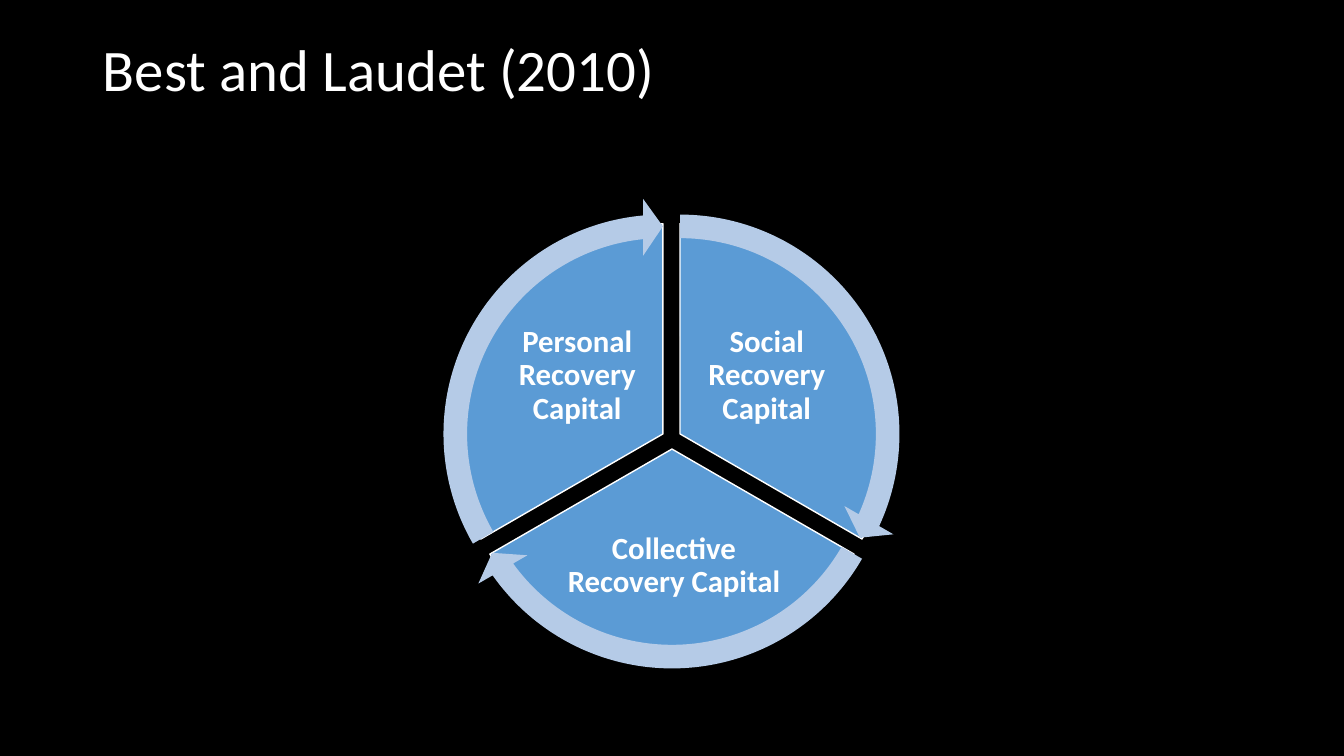
from dataclasses import dataclass

from pptx import Presentation
from pptx.dml.color import RGBColor
from pptx.enum.shapes import MSO_SHAPE
from pptx.enum.text import MSO_ANCHOR, PP_ALIGN
from pptx.util import Inches, Pt

PIE = MSO_SHAPE.PIE
ARROW = MSO_SHAPE.CIRCULAR_ARROW
MIDDLE = MSO_ANCHOR.MIDDLE
LEFT = PP_ALIGN.LEFT
CENTER = PP_ALIGN.CENTER


@dataclass(frozen=True)
class Theme:
    font: str = "Calibri"
    back: RGBColor = RGBColor(0, 0, 0)
    text: RGBColor = RGBColor(255, 255, 255)
    wedge: RGBColor = RGBColor(0x5B, 0x9B, 0xD5)
    arrow: RGBColor = RGBColor(0xB5, 0xCB, 0xE7)
    title: int = 42
    label: int = 22


THEME = Theme()
WEDGE_SIZE = 4.17
ARROW_SIZE = 4.68
SWEEP = 72
HEAD = 3.27
INSET = 0.03

SECTORS = [
    ("Social Recovery Capital", 162, (4.66, 2.22), (6.86, 3.11, 1.49, 1.24)),
    ("Collective Recovery Capital", 18, (4.58, 2.37), (5.57, 5.07, 2.23, 1.09)),
    ("Personal Recovery Capital", 90, (4.49, 2.22), (4.98, 3.11, 1.49, 1.24)),
]


def write(frame, text, size, align=CENTER, bold=False):
    frame.word_wrap = True
    frame.vertical_anchor = MIDDLE
    par = frame.paragraphs[0]
    par.alignment = align
    par.line_spacing = 0.9
    run = par.add_run()
    run.text = text
    font = run.font
    font.name = THEME.font
    font.size = Pt(size)
    font.bold = bold
    font.color.rgb = THEME.text


def add_title(slide, text):
    title = slide.shapes.title
    title.left, title.top = Inches(0.92), Inches(0.13)
    title.width, title.height = Inches(11.49), Inches(1.18)
    write(title.text_frame, text, THEME.title, align=LEFT)


def add_round(slide, kind, left, top, size, color, angles):
    side = Inches(size)
    shape = slide.shapes.add_shape(kind, Inches(left), Inches(top), side, side)
    for index, value in enumerate(angles):
        shape.adjustments[index] = value
    shape.shadow.inherit = False
    shape.fill.solid()
    shape.fill.fore_color.rgb = color
    return shape


def add_wedge(slide, start, end, left, top):
    wedge = add_round(slide, PIE, left, top, WEDGE_SIZE, THEME.wedge, (start, end))
    wedge.line.color.rgb = THEME.text
    wedge.line.width = Pt(1)


def add_label(slide, text, box):
    frame = slide.shapes.add_textbox(*map(Inches, box)).text_frame
    frame.margin_left = frame.margin_right = Inches(INSET)
    frame.margin_top = frame.margin_bottom = Inches(INSET)
    write(frame, text, THEME.label, bold=True)


def add_arrow(slide, start, end, left, top):
    shift = (ARROW_SIZE - WEDGE_SIZE) / 2
    angles = (0.05, HEAD, end - HEAD, start, 0.06)
    arrow = add_round(
        slide, ARROW, left - shift, top - shift, ARROW_SIZE, THEME.arrow, angles
    )
    arrow.line.fill.background()


def main():
    deck = Presentation()
    deck.slide_width, deck.slide_height = Inches(13.33), Inches(7.5)
    slide = deck.slides.add_slide(deck.slide_layouts[5])
    slide.background.fill.solid()
    slide.background.fill.fore_color.rgb = THEME.back
    add_title(slide, "Best and Laudet (2010)")
    for text, start, spot, box in SECTORS:
        add_wedge(slide, start, (start + SWEEP) % 216, *spot)
        add_label(slide, text, box)
    for _, start, spot, _ in SECTORS:
        add_arrow(slide, start, (start + SWEEP) % 216, *spot)
    deck.save("out.pptx")


if __name__ == "__main__":
    main()
